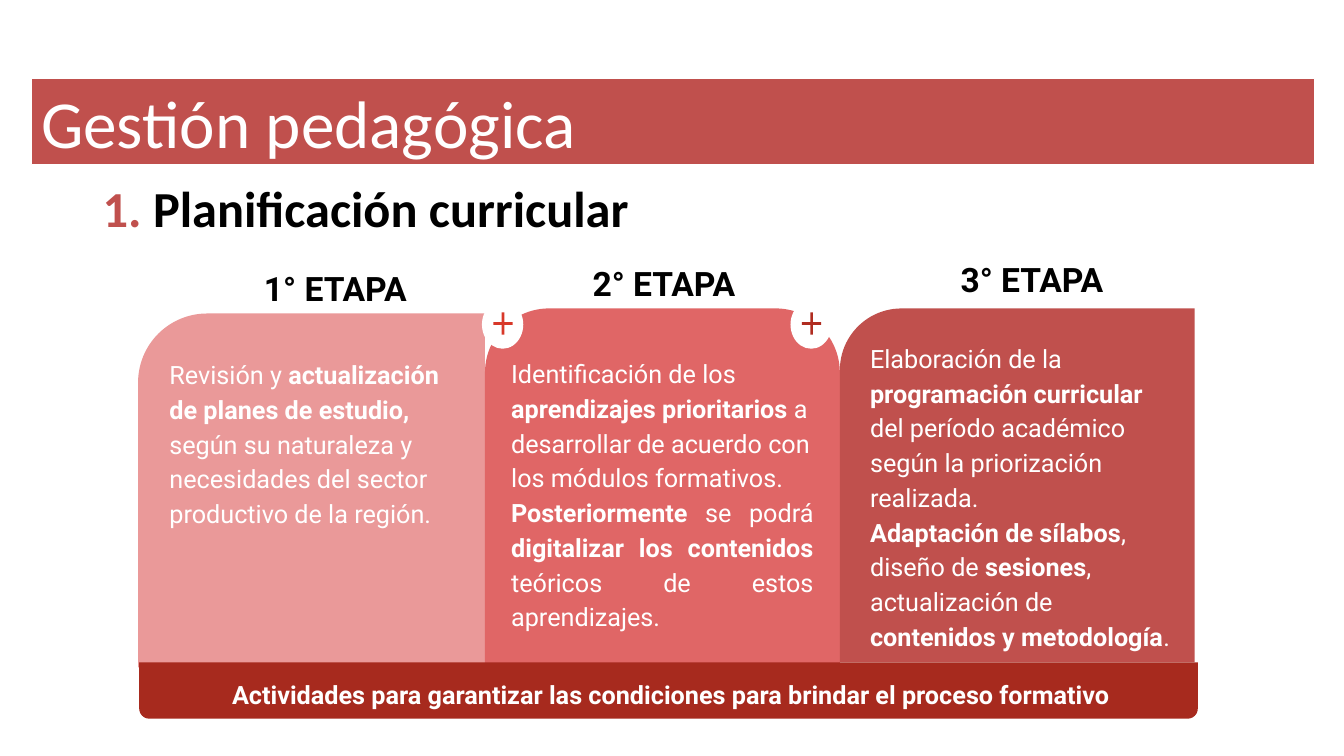
from lxml import etree
from pptx import Presentation
from pptx.dml.color import RGBColor
from pptx.enum import shapes, text
from pptx.oxml import ns
from pptx.util import Inches, Pt

SHAPE = shapes.MSO_SHAPE
ALIGN = text.PP_ALIGN
RED, WHITE, BLACK = "C0504D", "FFFFFF", "000000"

presentation = Presentation()
presentation.slide_width, presentation.slide_height = Inches(13.33), Inches(7.5)
slide = presentation.slides.add_slide(presentation.slide_layouts[6])


def add_block(kind, box, fill, adjustments=()):
    """Add a flat, borderless preset shape."""
    shape = slide.shapes.add_shape(kind, *map(Inches, box))
    shape.shadow.inherit = False
    shape.fill.solid()
    shape.fill.fore_color.rgb = RGBColor.from_string(fill)
    shape.line.fill.background()
    for index, value in enumerate(adjustments):
        shape.adjustments[index] = value
    return shape


def add_text(box, paragraphs, size, color, font="Roboto", inset=0.13,
             spacing=1.0, bold=False):
    """Add a text box from (alignment, text) pairs; ** switches bold on and off."""
    shape = slide.shapes.add_textbox(*map(Inches, box))
    frame = shape.text_frame
    frame.word_wrap = True
    for side in ("left", "top", "right", "bottom"):
        setattr(frame, f"margin_{side}", Inches(inset))
    for number, (alignment, content) in enumerate(paragraphs):
        paragraph = frame.add_paragraph() if number else frame.paragraphs[0]
        paragraph.alignment = alignment
        paragraph.line_spacing = spacing
        for part, words in enumerate(content.split("**")):
            if not words:
                continue
            run = paragraph.add_run()
            run.text = words
            style = {"name": font, "size": Pt(size), "bold": bold or part % 2 == 1}
            for name, value in style.items():
                setattr(run.font, name, value)
            run.font.color.rgb = RGBColor.from_string(color)
    return shape


# Title band and numbered heading
title_box = (0.31, 0.78, 12.73, 0.85)
band = add_block(SHAPE.RECTANGLE, title_box, RED)
band.line.color.rgb = RGBColor.from_string(WHITE)
band.line.width = Pt(0.75)
title = add_text(title_box, [(ALIGN.LEFT, "Gestión pedagógica")], 48, WHITE,
                 font="Calibri", inset=0.1)
title.text_frame.margin_top = title.text_frame.margin_bottom = Inches(0.05)
title.text_frame.vertical_anchor = text.MSO_ANCHOR.MIDDLE

heading = add_text((0.92, 1.66, 8.39, 0.64), [(ALIGN.LEFT, "Planificación curricular")],
                   36, BLACK, font="Calibri", inset=0.1, bold=True)
properties = heading.text_frame.paragraphs[0]._p.get_or_add_pPr()
properties.set("marL", str(Inches(0.5)))
properties.set("indent", str(Inches(-0.5)))
bullet_color = etree.SubElement(properties, ns.qn("a:buClr"))
etree.SubElement(bullet_color, ns.qn("a:srgbClr"), val=RED)
etree.SubElement(properties, ns.qn("a:buAutoNum"), type="arabicPeriod")

# Stages: card shape, card box, adjustments, flipped, fill, label box, text box, text
stages = [
    (SHAPE.ROUND_1_RECTANGLE, (1.37, 3.11, 3.44, 3.51), [0.199], True, "EA9999",
     (1.87, 2.53, 2.91, 0.64), (1.55, 3.39, 3.18, 3.23),
     [(ALIGN.LEFT, "Revisión y **actualización de planes de estudio, **según su "
       "naturaleza y necesidades del sector productivo de la región.")]),
    (SHAPE.ROUND_2_SAME_RECTANGLE, (4.81, 3.06, 3.52, 3.56), [0.181, 0], False, "E06666",
     (5.13, 2.48, 2.91, 0.64), (4.94, 3.38, 3.26, 3.16),
     [(ALIGN.LEFT, "Identificación de los **aprendizajes prioritarios** a desarrollar "
       "de acuerdo con los módulos formativos."),
      (ALIGN.JUSTIFY, "**Posteriormente** se podrá **digitalizar los contenidos "
       "**teóricos de estos aprendizajes.")]),
    (SHAPE.ROUND_1_RECTANGLE, (8.33, 3.06, 3.52, 3.51), [0.174], True, RED,
     (8.78, 2.44, 2.91, 0.68), (8.5, 3.23, 3.26, 3.23),
     [(ALIGN.LEFT, "Elaboración de la **programación curricular** del período "
       "académico según la priorización realizada."),
      (ALIGN.LEFT, "**Adaptación de sílabos**, diseño de **sesiones**, actualización "
       "de **contenidos y metodología**.")]),
]
for number, stage in enumerate(stages, start=1):
    kind, card_box, adjustments, flipped, fill, label_box, text_box, paragraphs = stage
    card = add_block(kind, card_box, fill, adjustments)
    if flipped:
        card._element.spPr.xfrm.set("flipH", "1")
    add_text(label_box, [(ALIGN.CENTER, f"{number}° ETAPA")], 24, BLACK, bold=True)
    add_text(text_box, paragraphs, 18, WHITE, spacing=1.15)

# Plus signs between the cards
for left, color in ((4.78, "D83829"), (7.84, "B02C20")):
    add_block(SHAPE.OVAL, (left, 2.98, 0.41, 0.48), WHITE)
    add_block(SHAPE.MATH_PLUS, (left + 0.08, 3.06, 0.26, 0.3), color, [0.099])

# Base bar
base = add_block(SHAPE.ROUND_2_SAME_RECTANGLE, (1.38, 6.57, 10.5, 0.56), "A72A1E", [0.181, 0])
base.rotation = 180
add_text((1.46, 6.61, 10.39, 0.31),
         [(ALIGN.CENTER, "Actividades para garantizar las condiciones para brindar "
           "el proceso formativo")], 18, WHITE, bold=True)

presentation.save("out.pptx")
